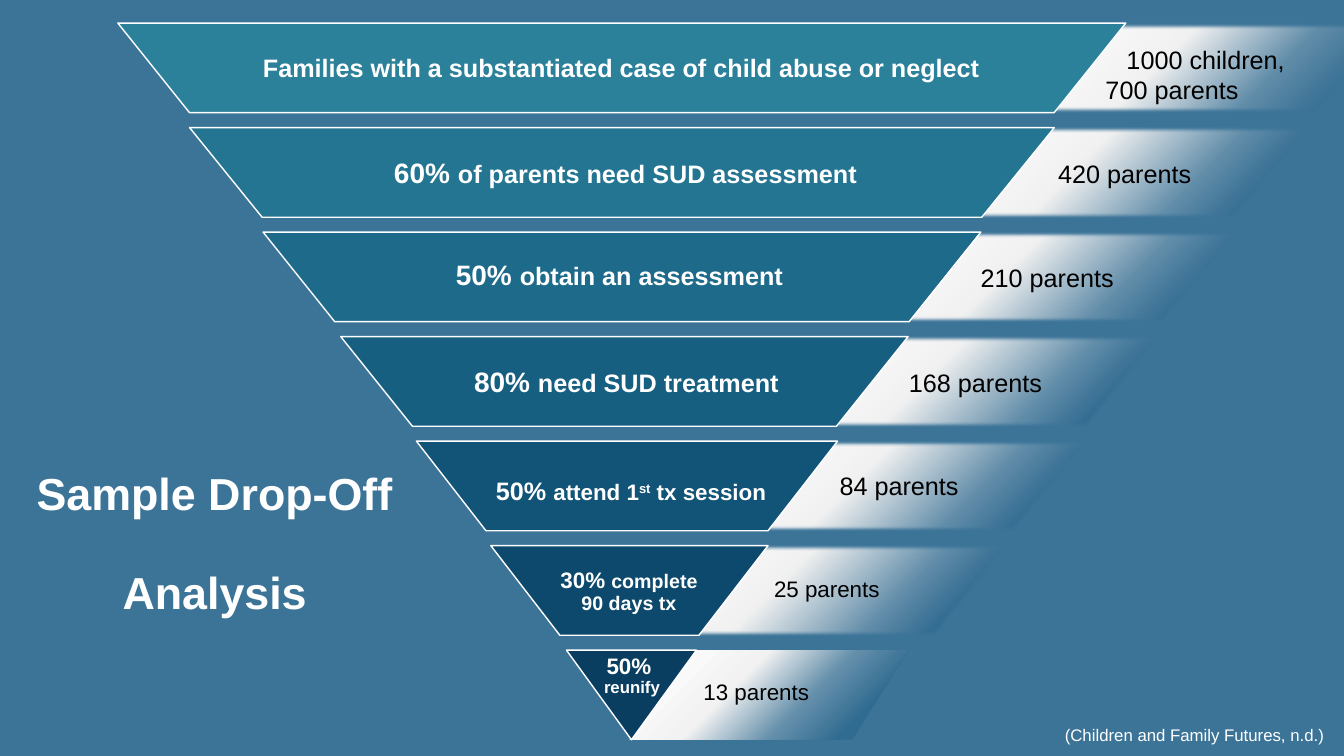
"""Build the Sample Drop-Off Analysis funnel slide."""
import pptx
import pptx.dml.color
import pptx.enum.shapes
import pptx.enum.text
import pptx.oxml
import pptx.oxml.ns
import pptx.util

Pt = pptx.util.Pt
ALIGN = pptx.enum.text.PP_ALIGN
ANCHOR = pptx.enum.text.MSO_ANCHOR
NAMESPACE = pptx.oxml.ns.nsdecls("a")


def color(value):
    """Turn a hex string into a colour."""
    return pptx.dml.color.RGBColor.from_string(value)


def write(frame, paragraphs, ink, bold, align, anchor, spacing=1.0, wrap=True):
    """Fill a text frame; each paragraph is a list of (text, size, baseline) runs."""
    for name, value in {"word_wrap": wrap, "vertical_anchor": anchor}.items():
        setattr(frame, name, value)
    for index, runs in enumerate(paragraphs):
        paragraph = frame.add_paragraph() if index else frame.paragraphs[0]
        paragraph.alignment, paragraph.line_spacing = align, spacing
        for words, size, baseline in runs:
            run = paragraph.add_run()
            run.text = words
            for name, value in {"name": "Arial", "size": Pt(size), "bold": bold}.items():
                setattr(run.font, name, value)
            run.font.color.rgb = color(ink)
            if baseline:
                run.font._element.set("baseline", str(baseline * 1000))


deck = pptx.Presentation()
deck.slide_width, deck.slide_height = Pt(960), Pt(540)
slide = deck.slides.add_slide(deck.slide_layouts[5])
shapes = slide.shapes
slide.background.fill.solid()
slide.background.fill.fore_color.rgb = color("3C7498")

title = shapes.title
for name, value in {"left": 14.4, "top": 299.5, "width": 278, "height": 180.7}.items():
    setattr(title, name, Pt(value))
write(title.text_frame, [[("Sample Drop-Off", 32, 0)], [("Analysis", 32, 0)]],
      "FFFFFF", True, ALIGN.CENTER, ANCHOR.MIDDLE, 0.9)
title.text_frame.paragraphs[1].space_before = Pt(36)

FIRST_TOP, STEP, LEVEL_HEIGHT = 16.5, 74.65, 64
FADE_TAIL = [(62, "F2F2F2", 100), (93, "FFFFFF", 100)]
# Each level: left, right, inset, fill; band left, width, soft edge, fade start.
levels = [
    (84.2, 804.2, 51.2, "2B809A", 734.4, 259.2, 2.5,
     [(4, "306B91", 96), (14, "306B91", 100), (35, "648FAB", 100)]),
    (135.4, 753.1, 51.8, "247592", 674.6, 259.2, 2.5, [(15, "306B91", 96), (33, "648FAB", 100)]),
    (187.9, 700.6, 51.2, "1D6A8A", 623.5, 259.2, 2.5, [(15, "306B91", 96), (33, "648FAB", 100)]),
    (243.4, 648.7, 51.2, "175F81", 568.8, 259.2, 2.5, [(17, "306B91", 96), (33, "648FAB", 100)]),
    (297.4, 598.3, 49.7, "125477", 517, 259.2, 2.5, [(16, "306B91", 100), (33, "648FAB", 100)]),
    (350.6, 548.6, 49.3, "0D496C", 460.8, 259.2, 2.5, [(17, "306B91", 100), (33, "648FAB", 100)]),
    (404.6, 497.5, 46.45, "093E61", 450, 198.7, 0,
     [(0, "306B91", 100), (19, "306B91", 100), (38, "648FAB", 100)]),
]
for row, (left, right, inset, fill, band_left, band_width, soft, fade) in enumerate(levels):
    top = FIRST_TOP + row * STEP
    bottom = top + LEVEL_HEIGHT
    band = shapes.add_shape(pptx.enum.shapes.MSO_SHAPE.FLOWCHART_DATA,
                            Pt(band_left), Pt(top), Pt(band_width), Pt(LEVEL_HEIGHT))
    band.shadow.inherit = False
    band.line.fill.background()
    stops = "".join(
        f'<a:gs pos="{place * 1000}"><a:srgbClr val="{tint}">'
        f'<a:alpha val="{alpha * 1000}"/></a:srgbClr></a:gs>'
        for place, tint, alpha in fade + FADE_TAIL)
    properties = band._element.spPr
    properties.find(pptx.oxml.ns.qn("a:prstGeom")).addnext(pptx.oxml.parse_xml(
        f'<a:gradFill {NAMESPACE} rotWithShape="1"><a:gsLst>{stops}</a:gsLst>'
        '<a:lin ang="13500000" scaled="0"/></a:gradFill>'))
    if soft:
        properties.find(pptx.oxml.ns.qn("a:effectLst")).append(pptx.oxml.parse_xml(
            f'<a:softEdge {NAMESPACE} rad="{Pt(soft)}"/>'))

    outline = shapes.build_freeform(Pt(right), Pt(top))
    outline.add_line_segments([(Pt(right - inset), Pt(bottom)), (Pt(left + inset), Pt(bottom)),
                               (Pt(left), Pt(top))])
    level = outline.convert_to_shape()
    level.shadow.inherit = False
    level.fill.solid()
    level.fill.fore_color.rgb = color(fill)
    level.line.color.rgb = color("FFFFFF")
    level.line.width = Pt(1)

steps = [
    (135.4, 17.3, 617, 64,
     [[("Families with a substantiated case of child abuse or neglect", 18, 0)]]),
    (193, 93.6, 507.6, 62.6, [[("60% ", 20, 0), ("of parents need SUD assessment", 18, 0)]]),
    (236.9, 164.9, 411.1, 64.8, [[("50% ", 20, 0), ("obtain an assessment", 18, 0)]]),
    (296.6, 243.4, 301.7, 61.2, [[("80% ", 20, 0), ("need SUD treatment", 18, 0)]]),
    (190.8, 317.5, 519.8, 67.7, [[("50% ", 18, 0), ("attend 1", 16, 0), ("st", 16, 30),
                                  (" tx session", 16, 0)]]),
    (383.8, 392.4, 131, 60.5, [[("30% ", 16, 0), ("complete 90 days tx", 14, 0)]]),
    (219.6, 464.4, 463.7, 40.3, [[("50% ", 16, 0)], [("reunify", 12, 0)]]),
]
for left, top, width, height, paragraphs in steps:
    step = shapes.add_textbox(Pt(left), Pt(top), Pt(width), Pt(height))
    anchor = ANCHOR.TOP if len(paragraphs) > 1 else ANCHOR.MIDDLE
    write(step.text_frame, paragraphs, "FFFFFF", True, ALIGN.CENTER, anchor, 0.9)

counts = [
    (782.6, 28.1, 149, 51.1, "1000 children, 700 parents", 18),
    (748.8, 109.4, 110.2, 28.8, "420 parents", 18),
    (693.4, 183.6, 110.2, 28.8, "210 parents", 18),
    (642.2, 258.5, 110.2, 28.8, "168 parents", 18),
    (592.6, 332.6, 100.1, 28.8, "84 parents", 18),
    (545.8, 407.5, 90.7, 26.6, "25 parents", 16),
    (495.4, 481, 90.7, 26.6, "13 parents", 16),
]
for row, (left, top, width, height, words, size) in enumerate(counts):
    count = shapes.add_textbox(Pt(left), Pt(top), Pt(width), Pt(height))
    write(count.text_frame, [[(words, size, 0)]], "000000", False, ALIGN.LEFT, ANCHOR.TOP,
          wrap=row == 0)
    if row == 0:
        indent = count.text_frame.paragraphs[0]._p.get_or_add_pPr()
        indent.set("marL", "0")
        indent.set("indent", str(Pt(15)))

citation = shapes.add_textbox(Pt(622), Pt(510.5), Pt(324), Pt(28.8))
citation.text_frame.margin_right = 0
write(citation.text_frame, [[("(Children and Family Futures, n.d.)", 12, 0)]],
      "FFFFFF", False, ALIGN.RIGHT, ANCHOR.MIDDLE)

deck.save("out.pptx")
